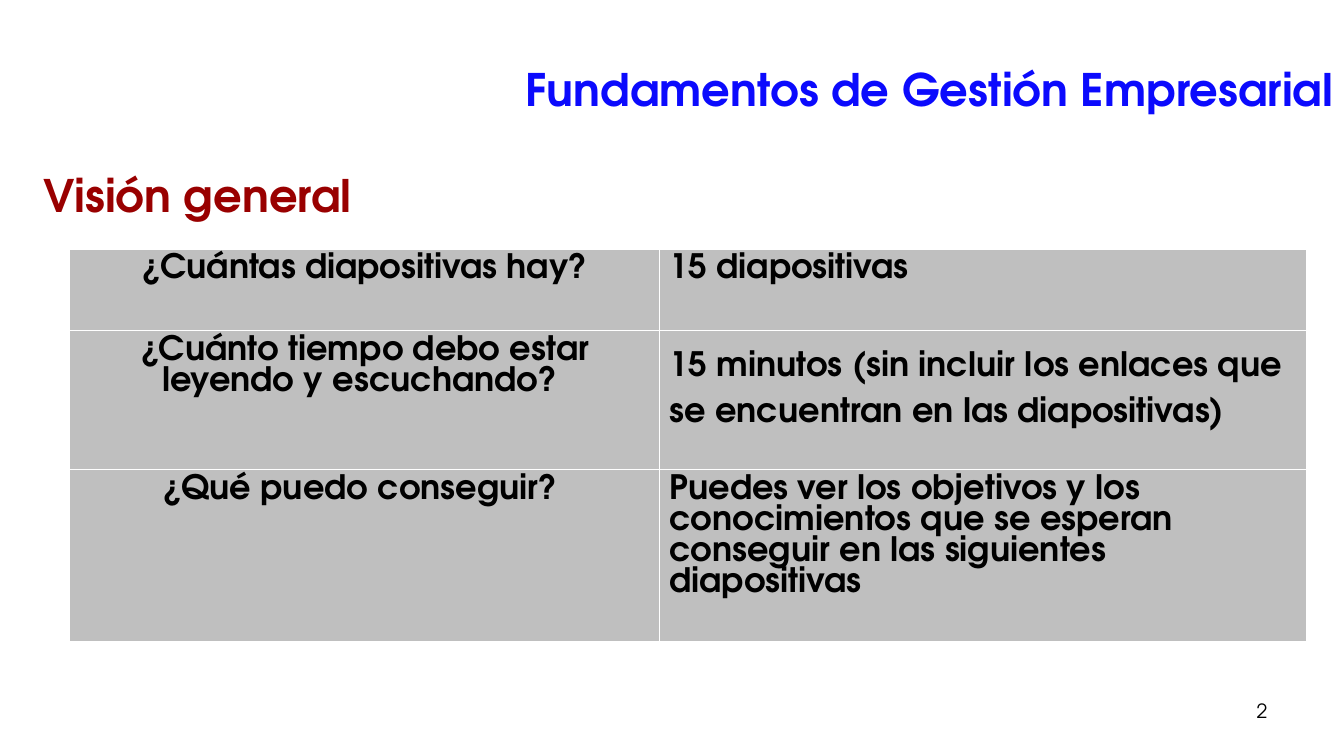
import pptx
import pptx.dml.color
import pptx.enum.text
import pptx.oxml
import pptx.oxml.ns
import pptx.util
from pptx.util import Inches

ALIGN = pptx.enum.text.PP_ALIGN
ANCHOR = pptx.enum.text.MSO_ANCHOR


class SlideBuilder:
    font = "TeX Gyre Adventor"
    colours = {
        "title": "0B0AFD",
        "heading": "990000",
        "text": "000000",
        "cell": "BFBFBF",
        "border": "FFFFFF",
    }

    def __init__(self, page):
        self.page = page

    def colour(self, name):
        return pptx.dml.color.RGBColor.from_string(self.colours[name])

    def add_words(self, frame, text, size, colour="text", bold=True,
                  align=ALIGN.LEFT, spacing=None):
        frame.word_wrap = True
        para = frame.paragraphs[0]
        para.alignment = align
        if spacing:
            para.line_spacing = spacing
        span = para.add_run()
        span.text = text
        span.font.name = self.font
        span.font.size = pptx.util.Pt(size)
        span.font.bold = bold
        span.font.color.rgb = self.colour(colour)

    def text(self, left, top, width, height, text, size,
             anchor=ANCHOR.TOP, inset=0.05, **style):
        box = self.page.shapes.add_textbox(
            Inches(left), Inches(top), Inches(width), Inches(height))
        box.text_frame.vertical_anchor = anchor
        box.text_frame.margin_top = Inches(inset)
        self.add_words(box.text_frame, text, size, **style)

    def border(self, cell):
        properties = cell._tc.get_or_add_tcPr()
        for side in "LRTB":
            properties.append(pptx.oxml.parse_xml(
                f'<a:ln{side} {pptx.oxml.ns.nsdecls("a")} w="12700"><a:solidFill>'
                f'<a:srgbClr val="{self.colours["border"]}"/>'
                f'</a:solidFill></a:ln{side}>'))

    def table(self, left, top, widths, heights, rows, size):
        grid = self.page.shapes.add_table(
            len(heights), len(widths), Inches(left), Inches(top),
            Inches(sum(widths)), Inches(sum(heights))).table
        for column, width in zip(grid.columns, widths):
            column.width = Inches(width)
        for row, height, content in zip(grid.rows, heights, rows):
            row.height = Inches(height)
            question, answer, spacing = content
            styles = ({"align": ALIGN.CENTER}, {"spacing": spacing})
            for cell, text, style in zip(row.cells, (question, answer), styles):
                self.border(cell)
                cell.fill.solid()
                cell.fill.fore_color.rgb = self.colour("cell")
                self.add_words(cell.text_frame, text, size, **style)


def main():
    deck = pptx.Presentation()
    deck.slide_width, deck.slide_height = Inches(13.33), Inches(7.5)
    builder = SlideBuilder(deck.slides.add_slide(deck.slide_layouts[6]))

    # Title and heading
    builder.text(0.92, 0, 12.41, 1.2, "Fundamentos de Gestión Empresarial", 32,
                 anchor=ANCHOR.BOTTOM, colour="title", align=ALIGN.RIGHT)
    builder.text(0.33, 1.49, 5.88, 0.67, "Visión general", 32,
                 inset=0.17, colour="heading")

    # Questions and answers, with the line spacing of each answer
    rows = [
        ("¿Cuántas diapositivas hay?", "15 diapositivas", None),
        ("¿Cuánto tiempo debo estar leyendo y escuchando? ",
         "15 minutos (sin incluir los enlaces que se encuentran "
         "en las diapositivas)", 1.5),
        ("¿Qué puedo conseguir? ",
         "Puedes ver los objetivos y los conocimientos que se esperan "
         "conseguir en las siguientes diapositivas", None),
    ]
    builder.table(0.69, 2.47, (5.85, 6.42), (0.81, 1.38, 1.5), rows, 24)

    # Slide number
    builder.text(9.56, 6.83, 3.11, 0.52, "2", 14, inset=0.1,
                 bold=False, align=ALIGN.RIGHT)

    deck.save("out.pptx")


if __name__ == "__main__":
    main()
